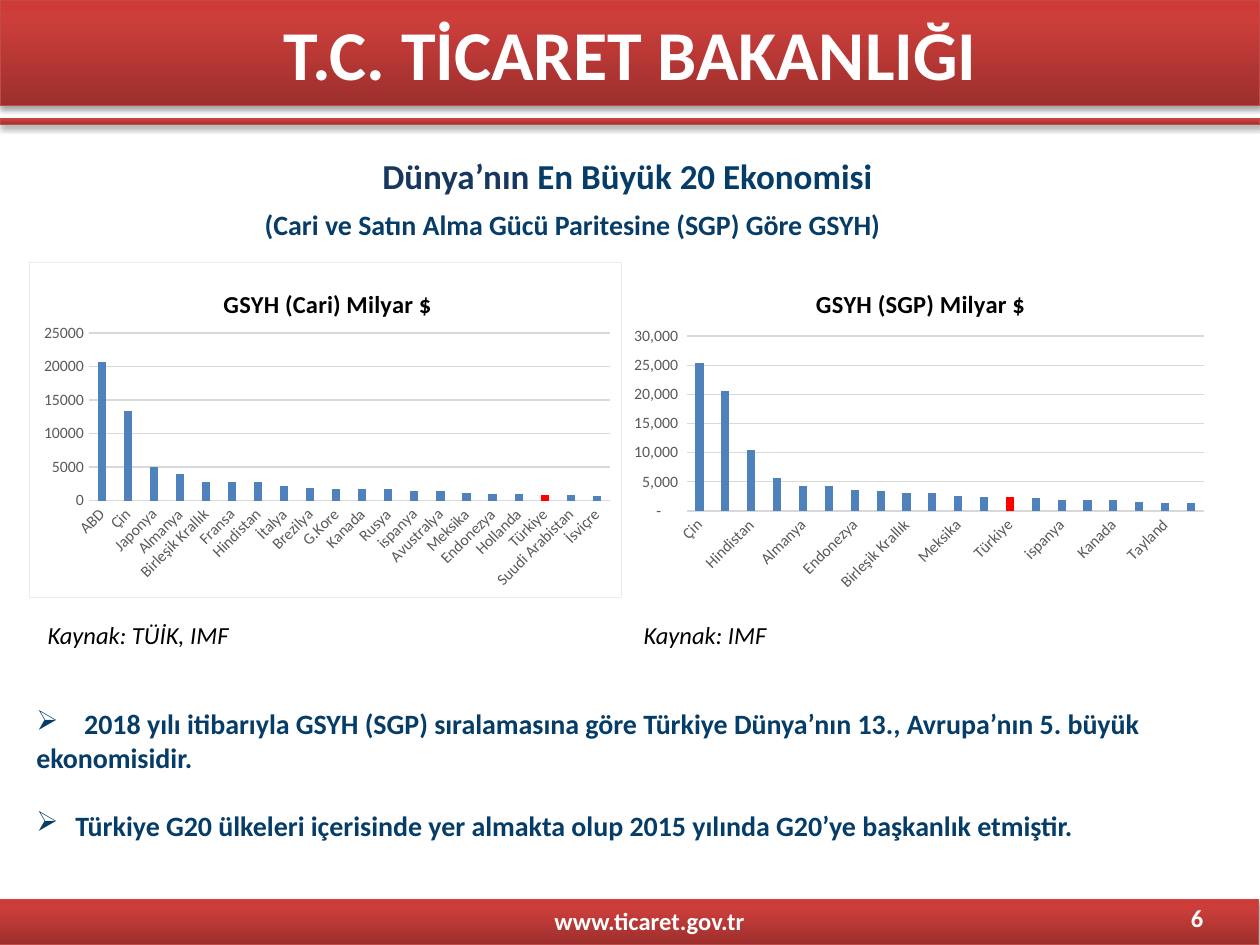
from copy import deepcopy
from dataclasses import dataclass
from typing import Any, NamedTuple

from lxml import etree
from pptx import Presentation
from pptx import util as u
from pptx.chart.data import CategoryChartData
from pptx.dml.color import RGBColor
from pptx.enum import chart as charts, shapes, text
from pptx.oxml import parse_xml
from pptx.oxml.ns import nsdecls, qn

COLUMNS, ROWS = 100, 75
FONT, NAVY, WHITE, BLACK = "Calibri", "063D68", "FFFFFF", "000000"
GRID, BLUE, RED, LABEL = "D9D9D9", "4F81BD", "FF0000", "595959"
ALIGN = text.PP_ALIGN

presentation = Presentation()
presentation.slide_width, presentation.slide_height = u.Inches(10), u.Inches(7.5)
slide = presentation.slides.add_slide(presentation.slide_layouts[5])


class Box(NamedTuple):
    column: float
    row: float
    columns: float
    rows: float

    def place(self) -> list[int]:
        across = presentation.slide_width / COLUMNS
        down = presentation.slide_height / ROWS
        return [round(self.column * across), round(self.row * down),
                round(self.columns * across), round(self.rows * down)]


@dataclass
class Line:
    runs: list[tuple[str, str]]
    size: float
    bold: bool = True
    italic: bool = False
    align: Any = ALIGN.LEFT
    before: float = 0
    margin: float = 0
    hanging: bool = False


@dataclass
class ColumnChart:
    title: str
    box: Box
    title_at: tuple[float, float]
    plot: tuple[float, float, float, float]
    top: int
    number_format: str
    data: dict[str, int]
    background: str = ""
    border: str = ""


def color(value: str) -> RGBColor:
    return RGBColor.from_string(value)


def set_format(target: Any, values: dict[str, Any]) -> None:
    for name, value in values.items():
        setattr(target, name, value)


def write(frame: Any, lines: list[Line], anchor: Any = text.MSO_ANCHOR.TOP, wrap: bool = True) -> None:
    set_format(frame, {"word_wrap": wrap, "vertical_anchor": anchor,
                       "auto_size": text.MSO_AUTO_SIZE.NONE})
    for index, line in enumerate(lines):
        paragraph = frame.paragraphs[0] if index == 0 else frame.add_paragraph()
        paragraph.alignment = line.align
        if line.before:
            paragraph.space_before = u.Pt(line.before)
        properties = paragraph._p.get_or_add_pPr()
        properties.set("marL", str(u.Inches(line.margin)))
        properties.set("indent", str(-u.Inches(line.margin) if line.hanging else 0))
        if line.hanging:
            etree.SubElement(properties, qn("a:buChar")).set("char", "➢")
        for words, shade in line.runs:
            run = paragraph.add_run()
            run.text = words
            set_format(run.font, {"name": FONT, "size": u.Pt(line.size),
                                  "bold": line.bold, "italic": line.italic})
            run.font.color.rgb = color(shade)


def add_text(box: Box, lines: list[Line], **options: Any) -> None:
    write(slide.shapes.add_textbox(*box.place()).text_frame, lines, **options)


def add_band(box: Box) -> Any:
    shape = slide.shapes.add_shape(shapes.MSO_SHAPE.RECTANGLE, *box.place())
    shape.fill.gradient()
    shape.fill.gradient_angle = 90
    stops = next(shape._element.spPr.iter(qn("a:gsLst")))
    stops.append(deepcopy(stops[1]))
    for stop, (position, shade) in zip(
            shape.fill.gradient_stops, [(0, "9C2F2D"), (0.8, "CB3E3A"), (1, "CE3B37")]):
        stop.position, stop.color.rgb = position, color(shade)
    shape.line.color.rgb, shape.line.width = color("BF4C48"), u.Pt(0.75)
    shape._element.spPr.append(parse_xml(
        f'<a:effectLst {nsdecls("a")}><a:outerShdw blurRad="{u.Pt(3.1)}" dist="{u.Pt(1.8)}" '
        'dir="5400000" rotWithShape="0"><a:srgbClr val="000000"><a:alpha val="35000"/>'
        '</a:srgbClr></a:outerShdw></a:effectLst>'))
    return shape


def layout(kind: str, values: dict[str, float]) -> Any:
    target = '<c:layoutTarget val="inner"/>' if kind == "plot" else ""
    modes = "".join(f'<c:{axis}Mode val="edge"/>' for axis in "xy")
    sizes = "".join(f'<c:{name} val="{value}"/>' for name, value in values.items())
    return parse_xml(f'<c:layout {nsdecls("c")}><c:manualLayout>{target}{modes}{sizes}'
                     '</c:manualLayout></c:layout>')


def solid(shade: str) -> str:
    return f'<a:solidFill><a:srgbClr val="{shade}"/></a:solidFill>' if shade else "<a:noFill/>"


def add_column_chart(item: ColumnChart) -> None:
    data = CategoryChartData()
    data.categories = item.data.keys()
    data.add_series("GSYH", item.data.values())
    chart = slide.shapes.add_chart(
        charts.XL_CHART_TYPE.COLUMN_CLUSTERED, *item.box.place(), data).chart
    chart.has_legend = False
    set_format(chart.font, {"name": FONT, "size": u.Pt(10)})
    chart.font.color.rgb = color(BLACK)
    write_title = chart.chart_title.text_frame
    run = write_title.paragraphs[0].add_run()
    run.text = item.title
    set_format(run.font, {"name": FONT, "size": u.Pt(14), "bold": True})
    run.font.color.rgb = color(BLACK)

    category, value = chart.category_axis, chart.value_axis
    for axis in (category, value):
        set_format(axis, {"major_tick_mark": charts.XL_TICK_MARK.NONE,
                          "minor_tick_mark": charts.XL_TICK_MARK.NONE})
        font = axis.tick_labels.font
        set_format(font, {"name": FONT, "size": u.Pt(9)})
        font.color.rgb = color(LABEL)
    category._element.find(qn("c:txPr")).find(qn("a:bodyPr")).set("rot", "-2700000")
    set_format(value, {"minimum_scale": 0, "maximum_scale": item.top, "major_unit": 5000,
                       "has_major_gridlines": True})
    set_format(value.tick_labels, {"number_format": item.number_format,
                                   "number_format_is_linked": False})
    value.format.line.fill.background()
    for line in (category.format.line, value.major_gridlines.format.line):
        line.color.rgb, line.width = color(GRID), u.Pt(0.75)

    plot = chart.plots[0]
    set_format(plot, {"gap_width": 219, "overlap": -27, "vary_by_categories": False})
    series = plot.series[0]
    highlighted = series.points[list(item.data).index("Türkiye")]
    for target, shade in ((series, BLUE), (highlighted, RED)):
        target.format.fill.solid()
        target.format.fill.fore_color.rgb = color(shade)

    root = chart._chartSpace
    for kind, tag, values in (("title", "c:title", dict(zip("xy", item.title_at))),
                              ("plot", "c:plotArea", dict(zip("xywh", item.plot)))):
        parent = next(root.iter(qn(tag)))
        for old in parent.findall(qn("c:layout")):
            parent.remove(old)
        parent.insert(1 if kind == "title" else 0, layout(kind, values))
    root.find(qn("c:chart")).addnext(parse_xml(
        f'<c:spPr {nsdecls("c", "a")}>{solid(item.background)}'
        f'<a:ln w="{u.Pt(0.75)}">{solid(item.border)}</a:ln></c:spPr>'))


CHARTS = [
    ColumnChart(
        "GSYH (SGP) Milyar $", Box(49.3, 20.8, 47.2, 26.7), (0.32, 0.06),
        (0.11, 0.22, 0.87, 0.52), 30000, '_-* #,##0_-;\\-* #,##0_-;_-* "-"??_-;_-@_',
        {"Çin": 25300, "ABD": 20600, "Hindistan": 10500, "Japonya": 5600, "Almanya": 4300,
         "Rusya": 4200, "Endonezya": 3500, "Brezilya": 3400, "Birleşik Krallık": 3000,
         "Fransa": 3000, "Meksika": 2600, "İtalya": 2400, "Türkiye": 2300, "G.Kore": 2200,
         "ispanya": 1900, "Suudi Arabistan": 1900, "Kanada": 1800, "İran": 1600,
         "Tayland": 1300, "Avustralya": 1300}),
    ColumnChart(
        "GSYH (Cari) Milyar $", Box(2.3, 20.8, 47.1, 26.7), (0.32, 0.06),
        (0.1, 0.21, 0.88, 0.5), 25000, "0",
        {"ABD": 20600, "Çin": 13400, "Japonya": 5000, "Almanya": 4000,
         "Birleşik Krallık": 2800, "Fransa": 2800, "Hindistan": 2700, "İtalya": 2100,
         "Brezilya": 1900, "G.Kore": 1700, "Kanada": 1700, "Rusya": 1700, "ispanya": 1400,
         "Avustralya": 1400, "Meksika": 1200, "Endonezya": 1000, "Hollanda": 900,
         "Türkiye": 800, "Suudi Arabistan": 800, "İsviçre": 700}, WHITE, "EEECE1"),
]

MIDDLE = text.MSO_ANCHOR.MIDDLE
banner = add_band(Box(0, 0, 100, 8.4))
write(banner.text_frame, [Line([("T.C. TİCARET BAKANLIĞI", WHITE)], 40, align=ALIGN.CENTER)], MIDDLE)
for band in (Box(0, 9.4, 100, 0.5), Box(-0.1, 71.4, 100, 3.6)):
    add_band(band)

title = slide.shapes.title
set_format(title, dict(zip(("left", "top", "width", "height"), Box(6.7, 12.2, 77.5, 7).place())))
write(title.text_frame, [
    Line([("Dünya’nın ", "17375E"), ("En Büyük 20 Ekonomisi", NAVY)], 20,
         align=ALIGN.CENTER, margin=0.87),
    Line([("(Cari ve Satın Alma Gücü Paritesine (SGP) Göre GSYH)", NAVY)], 16,
         align=ALIGN.CENTER, before=6.5)], MIDDLE)

add_text(Box(39.9, 71.4, 23.3, 3.4),
         [Line([("www.ticaret.gov.tr", WHITE)], 14, align=ALIGN.CENTER)], anchor=MIDDLE)
add_text(Box(73.2, 71.1, 23.3, 3.4), [Line([("6", WHITE)], 14, align=ALIGN.RIGHT)], anchor=MIDDLE)
add_text(Box(1.9, 55.6, 93.8, 11.8), [
    Line([("2018 yılı itibarıyla GSYH (SGP) sıralamasına göre Türkiye Dünya’nın 13., "
           "Avrupa’nın 5. büyük", NAVY)], 16, align=ALIGN.JUSTIFY, margin=0.38, hanging=True),
    Line([("ekonomisidir.", NAVY)], 16, align=ALIGN.JUSTIFY),
    Line([("Türkiye G20 ülkeleri içerisinde yer almakta olup 2015 yılında G20’ye başkanlık "
           "etmiştir.", NAVY)], 16, align=ALIGN.JUSTIFY, before=19.5, margin=0.31, hanging=True)])
for box, source in ((Box(2.8, 48.7, 17, 3.4), "Kaynak: TÜİK, IMF"),
                    (Box(50.1, 48.7, 11.8, 3.4), "Kaynak: IMF")):
    add_text(box, [Line([(source, BLACK)], 14, bold=False, italic=True)], wrap=False)
for item in CHARTS:
    add_column_chart(item)

presentation.save("out.pptx")
